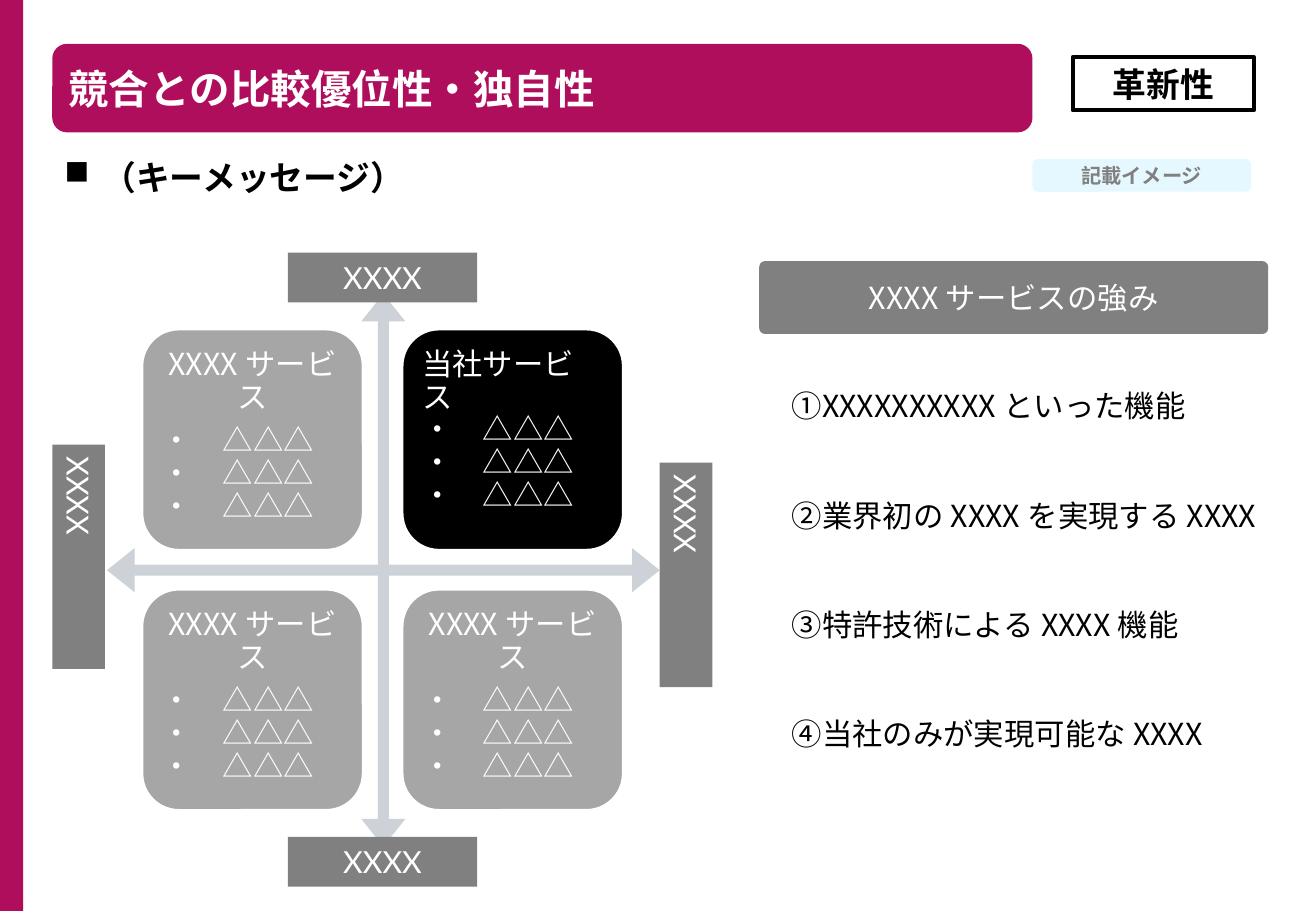
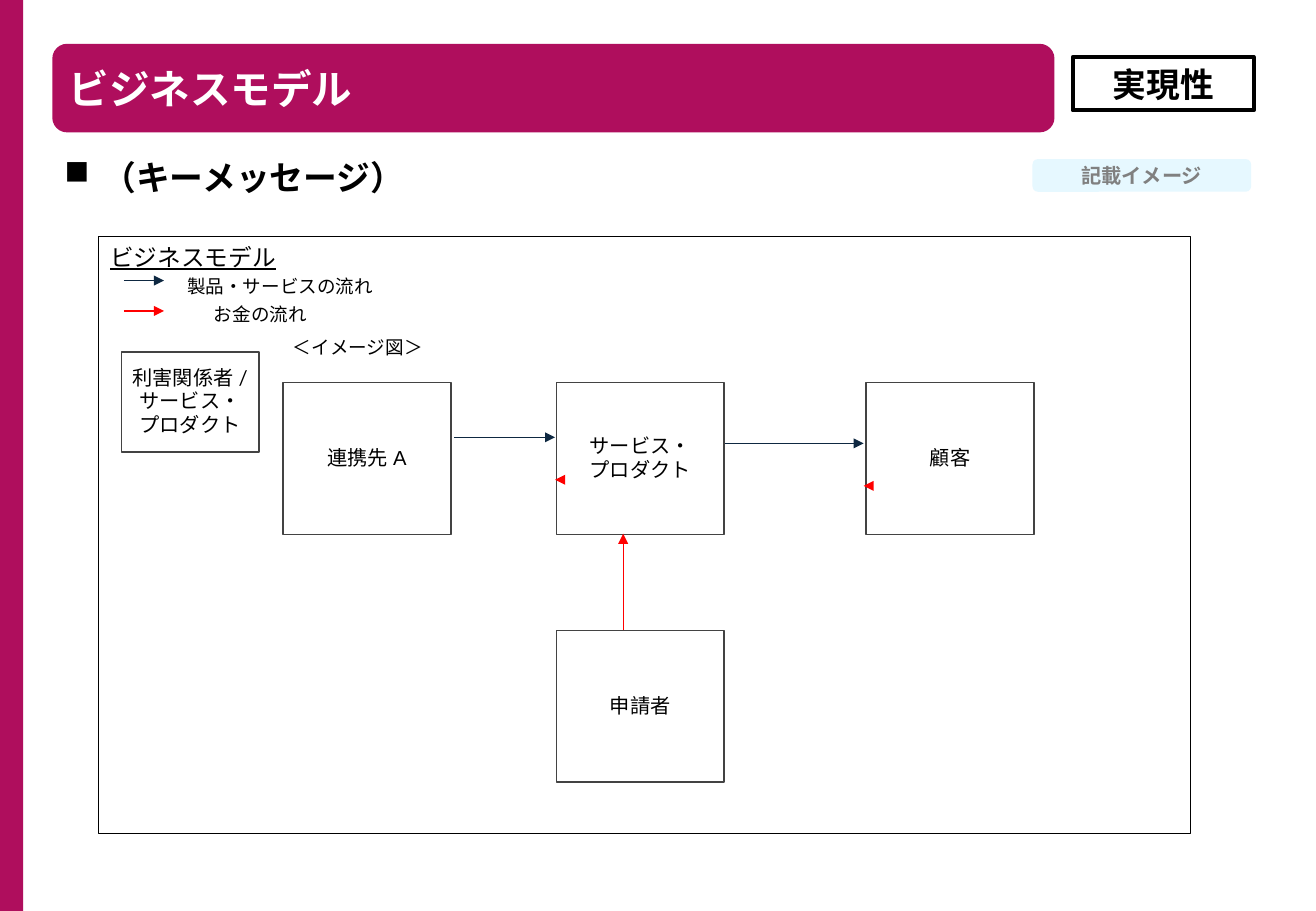
"""Builds two pitch slides: competitive positioning and business model."""
from lxml.etree import SubElement
from pptx import Presentation
from pptx.dml.color import RGBColor
from pptx.enum.shapes import MSO_CONNECTOR, MSO_SHAPE as Shape
from pptx.enum.text import MSO_ANCHOR as Anchor, PP_ALIGN as Align
from pptx.oxml.ns import qn
from pptx.util import Pt

BRAND, BLACK, WHITE, GREY = "AF0E5D", "000000", "FFFFFF", "808080"
CARD_GREY, ARROW_GREY, CHIP_BLUE = "A6A6A6", "CCD2D8", "E6F8FF"
OUTLINE, NAVY, RED = "434343", "0E2841", "FF0000"
GOTHIC, LATO, ARIAL = "Noto Sans CJK JP", "Lato", "Arial"
color = RGBColor.from_string


def add_box(slide, bounds, texts=(), kind=Shape.RECTANGLE, fill=None, line=None, width=1,
            font=GOTHIC, size=18, ink=BLACK, bold=False, underline=False,
            align=Align.CENTER, anchor=Anchor.MIDDLE, inset=None, spacing=None, bullet=None):
    """Add a shape, or a text box when kind is None, with one paragraph per text."""
    bounds = [Pt(value) for value in bounds]
    if kind is None:
        shape = slide.shapes.add_textbox(*bounds)
    else:
        shape = slide.shapes.add_shape(kind, *bounds)
        shape.shadow.inherit = False
        if fill:
            shape.fill.solid()
            shape.fill.fore_color.rgb = color(fill)
        else:
            shape.fill.background()
        if line:
            shape.line.color.rgb = color(line)
            shape.line.width = Pt(width)
        else:
            shape.line.fill.background()
    frame = shape.text_frame
    frame.word_wrap = True
    frame.vertical_anchor = anchor
    if inset is not None:
        frame.margin_left = frame.margin_right = Pt(inset)
        frame.margin_top = frame.margin_bottom = Pt(inset)
    for index, text in enumerate(texts):
        paragraph = frame.add_paragraph() if index else frame.paragraphs[0]
        paragraph.alignment = align
        if spacing:
            paragraph.line_spacing = spacing
        if bullet:
            properties = paragraph._p.get_or_add_pPr()
            properties.set("marL", str(Pt(22.5)))
            properties.set("indent", str(-Pt(22.5)))
            bullet_color = SubElement(properties, qn("a:buClr"))
            SubElement(bullet_color, qn("a:srgbClr"), val=ink)
            SubElement(properties, qn("a:buChar"), char=bullet)
        for number, part in enumerate(text.split("\n")):
            if number:
                paragraph.add_line_break()
            run = paragraph.add_run()
            run.text = part
            run.font.size = Pt(size)
            run.font.bold = bold
            run.font.underline = underline
            run.font.color.rgb = color(ink)
            run.font.name = font
            SubElement(run._r.get_or_add_rPr(), qn("a:ea"), typeface=font)
    return shape


def add_arrow(slide, start, end, ink):
    """Add a thin straight arrow."""
    points = [Pt(value) for value in (*start, *end)]
    connector = slide.shapes.add_connector(MSO_CONNECTOR.STRAIGHT, *points)
    connector.line.color.rgb = color(ink)
    connector.line.width = Pt(0.75)
    properties = connector.element.spPr
    SubElement(properties.find(qn("a:ln")), qn("a:tailEnd"), type="triangle")
    SubElement(properties, qn("a:effectLst"))


presentation = Presentation()
presentation.slide_width, presentation.slide_height = Pt(780), Pt(540)

slides = []
for title, title_width, criterion in [
    ("競合との比較優位性・独自性", 581, "革新性"),
    ("ビジネスモデル", 594, "実現性"),
]:
    slide = presentation.slides.add_slide(presentation.slide_layouts[6])
    slides.append(slide)
    add_box(slide, (0, 0, 13.7, 540), fill=BRAND)
    add_box(slide, (31, 26, title_width, 52.5), [title], Shape.ROUNDED_RECTANGLE,
            fill=BRAND, size=24, ink=WHITE, bold=True, align=Align.LEFT)
    add_box(slide, (31, 90, 702, 29.5), ["（キーメッセージ）"], None,
            size=20, bold=True, align=Align.LEFT, bullet="■")
    add_box(slide, (635.8, 33.8, 107.3, 31.7), [criterion], line=BLACK, width=2.25,
            size=20, bold=True)
    add_box(slide, (612, 94.3, 129.6, 19.4), ["記載イメージ"], Shape.ROUNDED_RECTANGLE,
            fill=CHIP_BLUE, font=LATO, size=12, ink=GREY, bold=True)
positioning, business = slides

axes = add_box(positioning, (63.4, 174.2, 327.6, 327.6), kind=Shape.QUAD_ARROW, fill=ARROW_GREY)
for index, value in enumerate((0.02, 0.04, 0.05)):
    axes.adjustments[index] = value

features = "\n".join(["・　△△△"] * 3)
for row in range(2):
    for column in range(2):
        own = (row, column) == (0, 1)
        texts = ["当社サービス\n" + features] if own else ["XXXXサービス", features]
        card = add_box(positioning, (84.2 + 154.2 * column, 195.1 + 154.2 * row, 131, 131), texts,
                       Shape.ROUNDED_RECTANGLE, fill=BLACK if own else CARD_GREY,
                       line=WHITE, width=1.5, ink=WHITE, anchor=Anchor.TOP,
                       inset=5.4, spacing=0.9)
        for paragraph in card.text_frame.paragraphs:
            paragraph.space_after = Pt(6.3)
        card.text_frame.paragraphs[-1].alignment = Align.LEFT

for bounds, vertical in [
    ((170.6, 149.8, 112.3, 29.5), False),
    ((170.6, 496, 112.3, 29.5), False),
    ((31, 263.5, 31.2, 133), True),
    ((391, 274.3, 31.2, 133), True),
]:
    label = add_box(positioning, bounds, ["XXXX"], fill=GREY, font=LATO, ink=WHITE)
    if vertical:
        label.text_frame._txBody.bodyPr.set("vert", "eaVert")

heading = add_box(positioning, (450, 154.8, 301.7, 43.2), ["XXXXサービスの強み"],
                  Shape.ROUNDED_RECTANGLE, fill=GREY, ink=WHITE)
heading.adjustments[0] = 0.08
strengths = add_box(positioning, (462.2, 226.1, 296, 225.4), [
    "①XXXXXXXXXXといった機能",
    "②業界初のXXXXを実現するXXXX",
    "③特許技術によるXXXX機能",
    "④当社のみが実現可能なXXXX",
], None, align=Align.LEFT, anchor=Anchor.TOP)
for paragraph in strengths.text_frame.paragraphs[1:]:
    paragraph.space_before = Pt(43.2)

add_box(business, (58.3, 140.4, 647.3, 353.5), ["ビジネスモデル"], line=BLACK, width=0.75,
        font=ARIAL, size=14, underline=True, align=Align.LEFT, anchor=Anchor.TOP)
for bounds, text in [
    ((105.1, 157.7, 164.2, 25.2), "製品・サービスの流れ"),
    ((121, 175.7, 142.6, 22.3), "お金の流れ"),
    ((167.8, 197.3, 99.4, 18), "＜イメージ図＞"),
]:
    add_box(business, bounds, [text], None, font=ARIAL, size=11, align=Align.LEFT,
            inset=5.8, spacing=0.95)

product = ["サービス・", "プロダクト"]
actors = []
for bounds, texts in [
    ((72, 208.8, 81.4, 59), ["利害関係者", *product]),
    ((167.8, 226.8, 99.4, 90), ["連携先A"]),
    ((329.8, 226.8, 99.4, 90), product),
    ((513.4, 226.8, 99.4, 90), ["顧客"]),
    ((329.8, 373.7, 99.4, 90), ["申請者"]),
]:
    actors.append(add_box(business, bounds, texts, line=OUTLINE, font=ARIAL, size=12,
                          inset=5.8, spacing=0.95))
slash = actors[0].text_frame.paragraphs[0].add_run()
slash.text = "/"
slash.font.name = LATO
slash.font.size = Pt(12)
slash.font.color.rgb = color(BLACK)

for start, end, ink in [
    ((73.4, 166.3), (97.2, 166.3), NAVY),
    ((73.4, 184.3), (97.2, 184.3), RED),
    ((269.3, 259.2), (329, 259.2), NAVY),
    ((429.8, 262.8), (511.9, 262.8), NAVY),
    ((329.8, 284.4), (329, 284.4), RED),
    ((513.4, 288), (511.9, 288), RED),
    ((369.4, 373.7), (369.4, 316.4), RED),
]:
    add_arrow(business, start, end, ink)

presentation.save("out.pptx")
